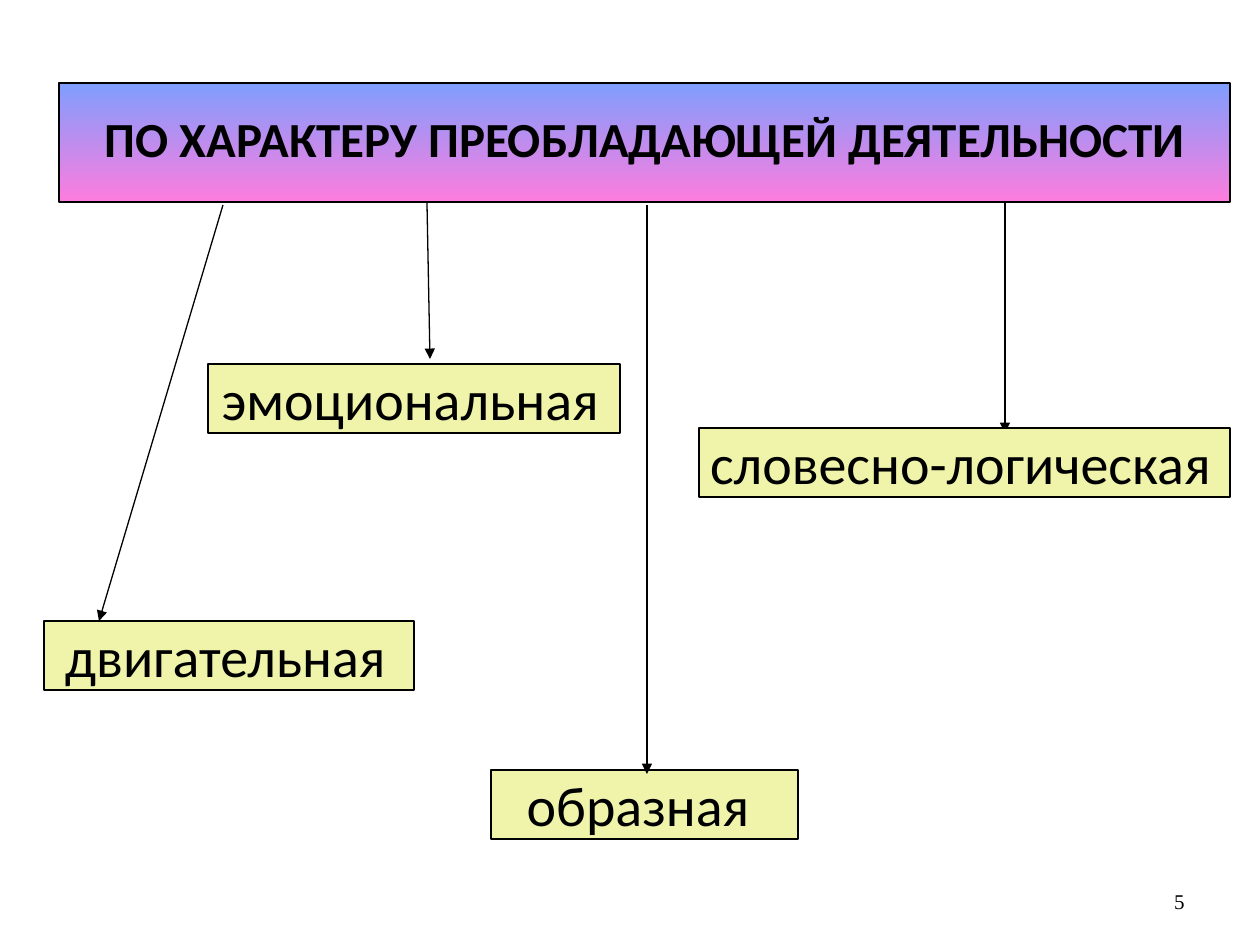
from dataclasses import dataclass

from lxml import etree
from pptx import Presentation
from pptx import util as u
from pptx.dml.color import RGBColor
from pptx.enum import shapes, text
from pptx.oxml.ns import qn

PX = 914400 / 126
BOX_H = 69


@dataclass(frozen=True)
class Theme:
    ink: str = "000000"
    box: str = "EFF4AA"
    # colour and opacity in percent, top to bottom
    bar: tuple = (("3366FF", 63), ("FF33CC", 64))
    font: str = "Calibri"
    number_font: str = "Times New Roman"
    title_size: int = 28
    box_size: int = 32
    gap_size: int = 18
    number_size: int = 12
    line: float = 0.75


T = Theme()


def px(*lengths):
    return [u.Emu(round(n * PX)) for n in lengths]


def rgb(code):
    return RGBColor.from_string(code)


def set_line(shape):
    shape.line.color.rgb = rgb(T.ink)
    shape.line.width = u.Pt(T.line)


def style_text(tf, size, font=T.font, bold=False, align=text.PP_ALIGN.CENTER):
    tf.vertical_anchor = text.MSO_ANCHOR.MIDDLE
    p = tf.paragraphs[0]
    p.alignment = align
    p.font.size, p.font.name, p.font.bold = u.Pt(size), font, bold
    p.font.color.rgb = rgb(T.ink)
    return p


def add_rect(s, x, y, w, h):
    sp = s.shapes.add_shape(shapes.MSO_SHAPE.RECTANGLE, *px(x, y, w, h))
    sp.shadow.inherit = False
    set_line(sp)
    sp.text_frame.word_wrap = False
    return sp


def add_title_bar(s, x, y, w, h, label):
    sp = add_rect(s, x, y, w, h)
    sp.fill.gradient()
    sp.fill.gradient_angle = 270
    for stop, (colour, opacity) in zip(sp.fill.gradient_stops, T.bar):
        stop.color.rgb = rgb(colour)
    fill = sp._element.spPr.find(qn("a:gradFill"))
    for clr, (colour, opacity) in zip(fill.iter(qn("a:srgbClr")), T.bar):
        etree.SubElement(clr, qn("a:alpha"), val=str(opacity * 1000))
    p = style_text(sp.text_frame, T.title_size, bold=True)
    p.line_spacing = 0.85
    p.add_run().text = label


def add_box(s, x, y, w, label, gap_size=T.gap_size):
    """Yellow label box; its trailing space shifts the word slightly left."""
    sp = add_rect(s, x, y, w, BOX_H)
    sp.fill.solid()
    sp.fill.fore_color.rgb = rgb(T.box)
    p = style_text(sp.text_frame, T.box_size)
    p.add_run().text = label
    r = p.add_run()
    r.text = " "
    r.font.size = u.Pt(gap_size)


def add_arrow(s, x1, y1, x2, y2):
    c = s.shapes.add_connector(shapes.MSO_CONNECTOR.STRAIGHT, *px(x1, y1, x2, y2))
    set_line(c)
    etree.SubElement(c.line._get_or_add_ln(), qn("a:tailEnd"), type="triangle")
    etree.SubElement(c._element.spPr, qn("a:effectLst"))


def add_slide_number(s, x, y, w, h, number):
    tf = s.shapes.add_textbox(*px(x, y, w, h)).text_frame
    tf.word_wrap = True
    p = style_text(tf, T.number_size, T.number_font, align=text.PP_ALIGN.RIGHT)
    p.add_run().text = number


def main():
    prs = Presentation()
    prs.slide_width, prs.slide_height = px(1260, 945)
    s = prs.slides.add_slide(prs.slide_layouts[6])

    add_slide_number(s, 903, 876, 294, 50, "5")
    add_title_bar(s, 59, 83, 1171, 119, "ПО ХАРАКТЕРУ ПРЕОБЛАДАЮЩЕЙ ДЕЯТЕЛЬНОСТИ")
    add_arrow(s, 223, 205, 99, 621)
    add_arrow(s, 427, 202, 430, 359)
    add_arrow(s, 1005, 202, 1005, 433)
    add_box(s, 44, 621, 370, "двигательная")
    add_box(s, 208, 364, 412, "эмоциональная")
    add_box(s, 491, 770, 307, "образная", gap_size=T.box_size)
    add_box(s, 699, 428, 531, "словесно-логическая")
    # the last arrow ends on top of its box
    add_arrow(s, 647, 205, 647, 774)

    prs.save("out.pptx")


if __name__ == "__main__":
    main()
